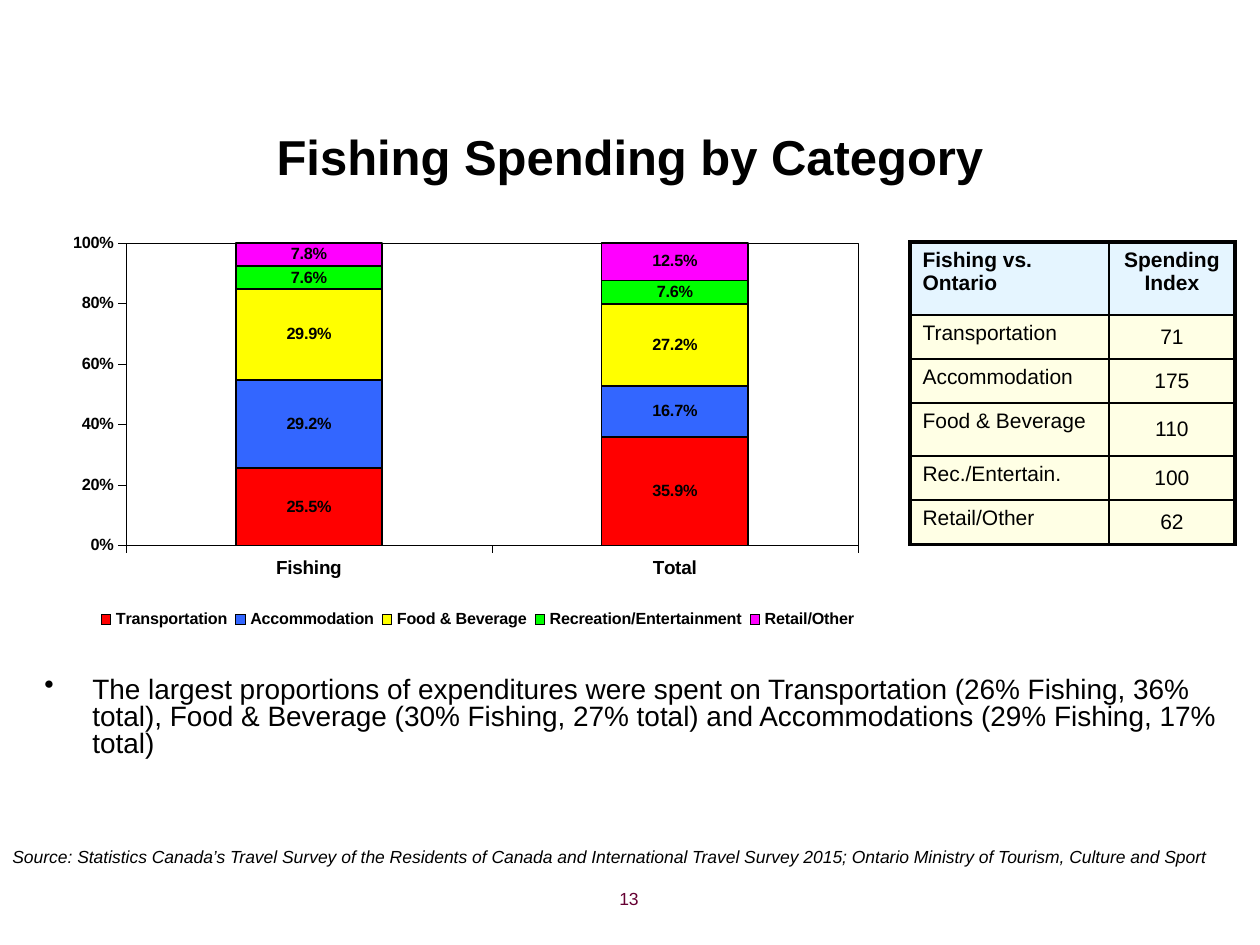
from lxml import etree
from pptx import Presentation
from pptx.chart.data import CategoryChartData
from pptx.dml.color import RGBColor
from pptx.enum.chart import XL_CHART_TYPE, XL_LABEL_POSITION, XL_LEGEND_POSITION, XL_TICK_MARK
from pptx.enum.text import MSO_ANCHOR, PP_ALIGN
from pptx.oxml import parse_xml
from pptx.oxml.ns import nsdecls, qn
from pptx.util import Emu, Pt

STACKED = XL_CHART_TYPE.COLUMN_STACKED_100
LABEL_CENTER = XL_LABEL_POSITION.CENTER
LEGEND_BOTTOM = XL_LEGEND_POSITION.BOTTOM
TICK_OUT, TICK_NONE = XL_TICK_MARK.OUTSIDE, XL_TICK_MARK.NONE
TOP, MIDDLE = MSO_ANCHOR.TOP, MSO_ANCHOR.MIDDLE
LEFT, CENTER, RIGHT = PP_ALIGN.LEFT, PP_ALIGN.CENTER, PP_ALIGN.RIGHT

PX = 914400 / 126
FONT = "Arial"
COLORS = {
    "black": "000000", "maroon": "660033", "header": "CCECFF", "body": "FFFFCC",
    "red": "FF0000", "blue": "3366FF", "yellow": "FFFF00", "green": "00FF00", "magenta": "FF00FF",
}
SPENDING = [
    ("Transportation", (0.255, 0.359), "red"),
    ("Accommodation", (0.292, 0.167), "blue"),
    ("Food & Beverage", (0.299, 0.272), "yellow"),
    ("Recreation/Entertainment", (0.076, 0.076), "green"),
    ("Retail/Other", (0.078, 0.125), "magenta"),
]
INDEX_ROWS = [
    ("Fishing vs. Ontario", "Spending Index"),
    ("Transportation", "71"),
    ("Accommodation", "175"),
    ("Food & Beverage", "110"),
    ("Rec./Entertain.", "100"),
    ("Retail/Other", "62"),
]
COLUMN_WIDTHS = (199, 126)
ROW_HEIGHTS = (73, 44, 44, 53, 44, 45)


def px(length):
    return Emu(round(length * PX))


def rgb(name):
    return RGBColor.from_string(COLORS[name])


def style_font(font, size, color="black", bold=False, italic=False):
    font.name = FONT
    font.size = Pt(size)
    font.bold = bold
    font.italic = italic
    font.color.rgb = rgb(color)


def write_text(frame, text, size, align=LEFT, bullet_indent=0, line_spacing=None, **style):
    frame.word_wrap = True
    para = frame.paragraphs[0]
    if bullet_indent:
        properties = para._p.get_or_add_pPr()
        properties.set("marL", str(px(bullet_indent)))
        properties.set("indent", str(-px(bullet_indent)))
        etree.SubElement(properties, qn("a:buChar")).set("char", "•")
    para.alignment = align
    if line_spacing:
        para.line_spacing = line_spacing
    span = para.add_run()
    span.text = text
    style_font(span.font, size, **style)


def add_title(slide, text):
    title = slide.shapes.title
    title.left, title.top, title.width, title.height = map(px, (63, 108, 1134, 95))
    title.text_frame.vertical_anchor = MIDDLE
    write_text(title.text_frame, text, 28, align=CENTER, bold=True)


def add_text(slide, place, text, size, **text_format):
    box = slide.shapes.add_textbox(*map(px, place))
    write_text(box.text_frame, text, size, **text_format)


def outline(line, width):
    line.color.rgb = rgb("black")
    line.width = Pt(width)


def set_layout(element, left, top, width, height, inner=False):
    target = '<c:layoutTarget val="inner"/>' if inner else ""
    return parse_xml(
        f'<c:layout {nsdecls("c")}><c:manualLayout>{target}'
        '<c:xMode val="edge"/><c:yMode val="edge"/>'
        f'<c:x val="{left}"/><c:y val="{top}"/><c:w val="{width}"/><c:h val="{height}"/>'
        '</c:manualLayout></c:layout>'
    ) if element is None else element


def frame_plot(chart):
    area = chart._chartSpace.chart.plotArea
    for old in area.findall(qn("c:layout")):
        area.remove(old)
    area.insert(0, set_layout(None, 0.105, 0.033, 0.884, 0.632, inner=True))
    area.append(parse_xml(
        f'<c:spPr {nsdecls("c", "a")}><a:noFill/><a:ln w="3175"><a:solidFill>'
        f'<a:srgbClr val="{COLORS["black"]}"/></a:solidFill></a:ln></c:spPr>'
    ))


def style_axis(axis, size):
    axis.has_major_gridlines = False
    axis.major_tick_mark = TICK_OUT
    axis.minor_tick_mark = TICK_NONE
    style_font(axis.tick_labels.font, size, bold=True)
    outline(axis.format.line, 0.25)


def style_series(series, color):
    series.format.fill.solid()
    series.format.fill.fore_color.rgb = rgb(color)
    outline(series.format.line, 1)
    labels = series.data_labels
    labels.show_value = True
    labels.number_format = "0.0%"
    labels.number_format_is_linked = False
    labels.position = LABEL_CENTER
    style_font(labels.font, 9.3, bold=True)


def add_legend(chart):
    chart.has_legend = True
    legend = chart.legend
    legend.position = LEGEND_BOTTOM
    legend.include_in_layout = False
    style_font(legend.font, 9.2, bold=True)
    for old in legend._element.findall(qn("c:layout")):
        legend._element.remove(old)
    position = legend._element.find(qn("c:legendPos"))
    position.addnext(set_layout(None, 0.065, 0.79, 0.93, 0.06))


def add_spending_chart(slide):
    data = CategoryChartData(number_format="0.0%")
    data.categories = ["Fishing", "Total"]
    for name, values, _ in SPENDING:
        data.add_series(name, values)
    chart = slide.shapes.add_chart(STACKED, *map(px, (39, 227, 828, 479)), data).chart
    chart.has_title = False
    style_font(chart.font, 15.8, bold=True)
    plot = chart.plots[0]
    plot.gap_width = 150
    plot.overlap = 100
    plot.vary_by_categories = False
    for series, (_, _, color) in zip(plot.series, SPENDING):
        style_series(series, color)
    style_axis(chart.category_axis, 10.8)
    axis = chart.value_axis
    style_axis(axis, 9.3)
    axis.minimum_scale, axis.maximum_scale, axis.major_unit = 0, 1, 0.2
    axis.tick_labels.number_format = "0%"
    axis.tick_labels.number_format_is_linked = False
    add_legend(chart)
    frame_plot(chart)


def set_borders(cell, widths):
    properties = cell._tc.get_or_add_tcPr()
    for side, width in zip("LRTB", widths):
        properties.append(parse_xml(
            f'<a:ln{side} {nsdecls("a")} w="{Pt(width)}"><a:solidFill>'
            f'<a:srgbClr val="{COLORS["black"]}"/></a:solidFill></a:ln{side}>'
        ))


def fill_cell(cell, color):
    cell.fill.solid()
    cell.fill.fore_color.rgb = rgb(color)
    swatch = cell._tc.tcPr.find(qn("a:solidFill"))[0]
    etree.SubElement(swatch, qn("a:alpha")).set("val", "50000")


def add_index_table(slide):
    place = (910, 242, sum(COLUMN_WIDTHS), sum(ROW_HEIGHTS))
    table = slide.shapes.add_table(len(INDEX_ROWS), 2, *map(px, place)).table
    for column, width in zip(table.columns, COLUMN_WIDTHS):
        column.width = px(width)
    last_row = len(INDEX_ROWS) - 1
    for r, (height, texts) in enumerate(zip(ROW_HEIGHTS, INDEX_ROWS)):
        table.rows[r].height = px(height)
        for c, text in enumerate(texts):
            cell = table.cell(r, c)
            is_value = r > 0 and c == 1
            cell.vertical_anchor = MIDDLE if is_value else TOP
            if is_value:
                cell.margin_left = cell.margin_right = cell.margin_top = cell.margin_bottom = 0
            outer_sides = (c == 0, c == 1, r == 0, r == last_row)
            set_borders(cell, [2.25 if outer else 1 for outer in outer_sides])
            fill_cell(cell, "body" if r else "header")
            write_text(cell.text_frame, text, 12, align=CENTER if c else LEFT, bold=r == 0)


def main():
    deck = Presentation()
    deck.slide_width, deck.slide_height = px(1260), px(945)
    slide = deck.slides.add_slide(deck.slide_layouts[5])
    add_title(slide, "Fishing Spending by Category")
    add_text(slide, (32, 672, 1197, 179),
             "The largest proportions of expenditures were spent on Transportation (26% Fishing, 36% total), "
             "Food & Beverage (30% Fishing, 27% total) and Accommodations (29% Fishing, 17% total)",
             16, bullet_indent=48, line_spacing=0.8)
    add_index_table(slide)
    add_text(slide, (357, 882, 294, 44), "13", 10, align=RIGHT, color="maroon")
    add_spending_chart(slide)
    add_text(slide, (0, 840, 1235, 34),
             "Source: Statistics Canada’s Travel Survey of the Residents of Canada and International Travel "
             "Survey 2015; Ontario Ministry of Tourism, Culture and Sport", 10, italic=True)
    deck.save("out.pptx")


if __name__ == "__main__":
    main()
